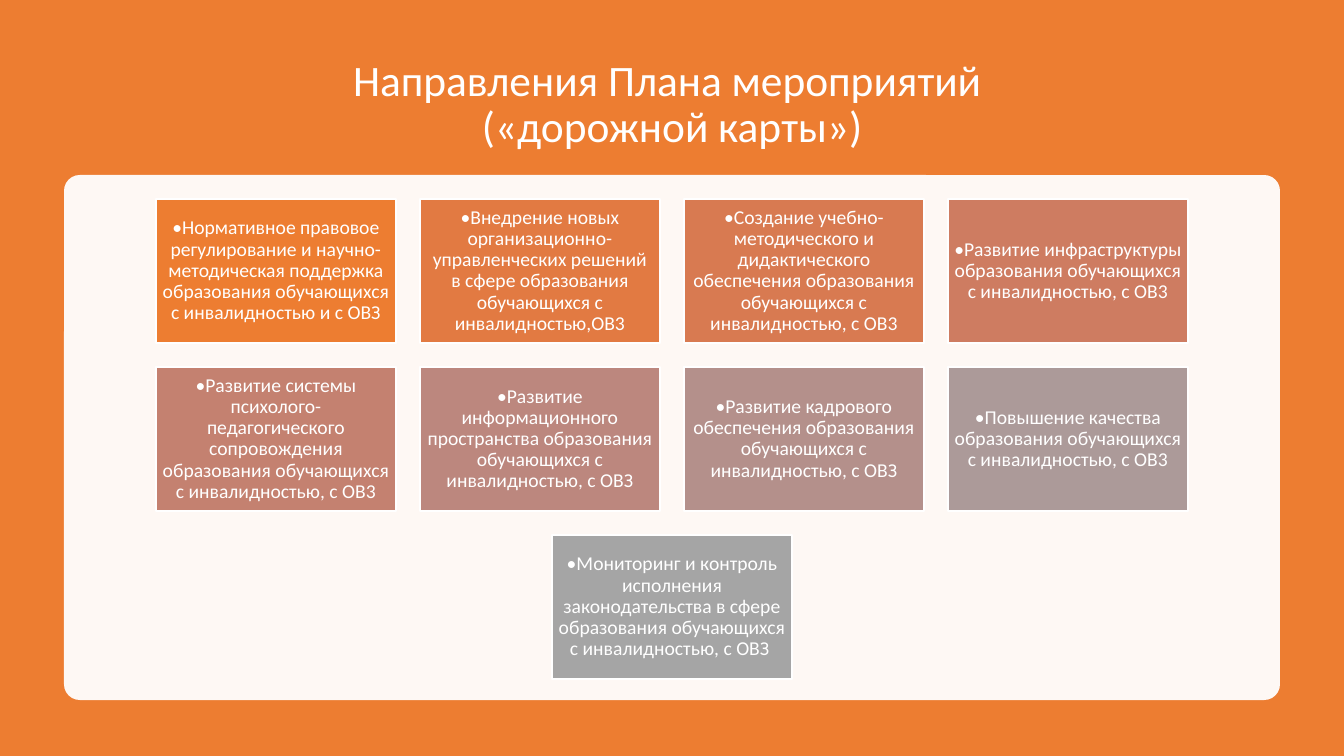
from dataclasses import dataclass

from lxml.etree import SubElement
from pptx import Presentation
from pptx.dml.color import RGBColor
from pptx.enum.shapes import MSO_SHAPE as Preset
from pptx.enum.text import MSO_ANCHOR as Anchor, MSO_AUTO_SIZE as AutoSize, PP_ALIGN as Align
from pptx.oxml.ns import qn
from pptx.shapes.autoshape import Shape
from pptx.slide import Slide
from pptx.util import Emu, Pt

EMU_PER_PX = 914400 / 100.8
PAGE_WIDTH, PAGE_HEIGHT = 1344, 756
BOX_WIDTH, BOX_HEIGHT = 240, 144
BOX_GAP = 24
GRID_TOP = 199
COLUMNS = 4
BOX_INSET = 6

WHITE = RGBColor(0xFF, 0xFF, 0xFF)
ORANGE = RGBColor(0xED, 0x7D, 0x31)
PUMPKIN = RGBColor(0xE2, 0x7A, 0x42)
COPPER = RGBColor(0xD8, 0x7A, 0x51)
TERRACOTTA = RGBColor(0xCE, 0x7C, 0x61)
CLAY = RGBColor(0xC4, 0x81, 0x70)
DUSTY_ROSE = RGBColor(0xBC, 0x87, 0x7E)
MAUVE = RGBColor(0xB4, 0x90, 0x8B)
WARM_GRAY = RGBColor(0xAC, 0x9A, 0x99)
GRAY = RGBColor(0xA5, 0xA5, 0xA5)


@dataclass(frozen=True)
class Direction:
    text: str
    color: RGBColor


TITLE = "Направления Плана мероприятий \v(«дорожной карты»)"
DIRECTIONS = [
    Direction("•Нормативное правовое регулирование и научно-методическая поддержка "
              "образования обучающихся с инвалидностью и с ОВЗ", ORANGE),
    Direction("•Внедрение новых организационно-управленческих решений в сфере "
              "образования обучающихся с инвалидностью,OB3", PUMPKIN),
    Direction("•Создание учебно-методического и дидактического обеспечения "
              "образования обучающихся с инвалидностью, с ОВ3", COPPER),
    Direction("•Развитие инфраструктуры образования обучающихся "
              "с инвалидностью, с ОВ3", TERRACOTTA),
    Direction("•Развитие системы психолого-педагогического сопровождения "
              "образования обучающихся с инвалидностью, с ОВ3", CLAY),
    Direction("•Развитие информационного пространства образования обучающихся "
              "с инвалидностью, с ОВЗ", DUSTY_ROSE),
    Direction("•Развитие кадрового обеспечения образования обучающихся "
              "с инвалидностью, с OBЗ", MAUVE),
    Direction("•Повышение качества образования обучающихся "
              "с инвалидностью, с ОВ3", WARM_GRAY),
    Direction("•Мониторинг и контроль исполнения законодательства в сфере "
              "образования обучающихся с инвалидностью, с ОВЗ ", GRAY),
]


def px(length: int) -> Emu:
    return Emu(round(length * EMU_PER_PX))


def write_text(shape: Shape, text: str, *, size: int, inset: int | None = None) -> None:
    frame = shape.text_frame
    frame.word_wrap = True
    frame.auto_size = AutoSize.NONE
    frame.vertical_anchor = Anchor.MIDDLE
    if inset is not None:
        frame.margin_left = frame.margin_right = px(inset)
        frame.margin_top = frame.margin_bottom = px(inset)
    para = frame.paragraphs[0]
    para.text = text
    para.alignment = Align.CENTER
    para.line_spacing = 0.9
    for span in para.runs:
        span.font.name = "Calibri"
        span.font.size = Pt(size)
        span.font.color.rgb = WHITE


def add_block(page: Slide, preset: Preset, left: int, top: int, width: int, height: int,
              color: RGBColor) -> Shape:
    block = page.shapes.add_shape(preset, px(left), px(top), px(width), px(height))
    block.shadow.inherit = False
    block.fill.solid()
    block.fill.fore_color.rgb = color
    block.line.fill.background()
    return block


def set_opacity(block: Shape, percent: int) -> None:
    color = block.fill._xPr.find(qn("a:solidFill")).find(qn("a:srgbClr"))
    SubElement(color, qn("a:alpha")).set("val", str(percent * 1000))


def add_title(page: Slide) -> None:
    title = page.shapes.title
    title.left, title.top = px(92), px(50)
    title.width, title.height = px(1160), px(111)
    write_text(title, TITLE, size=31)
    page.shapes._spTree.append(title._element)


def add_panel(page: Slide) -> None:
    panel = add_block(page, Preset.ROUNDED_RECTANGLE, 64, 175, 1216, 525, WHITE)
    panel.adjustments[0] = 0.03
    set_opacity(panel, 95)


def add_directions(page: Slide) -> None:
    for start in range(0, len(DIRECTIONS), COLUMNS):
        row = DIRECTIONS[start:start + COLUMNS]
        row_width = len(row) * (BOX_WIDTH + BOX_GAP) - BOX_GAP
        row_left = (PAGE_WIDTH - row_width) // 2
        top = GRID_TOP + start // COLUMNS * (BOX_HEIGHT + BOX_GAP)
        for column, direction in enumerate(row):
            left = row_left + column * (BOX_WIDTH + BOX_GAP)
            box = add_block(page, Preset.RECTANGLE, left, top, BOX_WIDTH, BOX_HEIGHT,
                            direction.color)
            box.line.color.rgb = WHITE
            box.line.width = Pt(1)
            write_text(box, direction.text, size=14, inset=BOX_INSET)


def main() -> None:
    deck = Presentation()
    deck.slide_width, deck.slide_height = px(PAGE_WIDTH), px(PAGE_HEIGHT)
    page = deck.slides.add_slide(deck.slide_layouts[5])
    add_block(page, Preset.RECTANGLE, 0, 0, PAGE_WIDTH, PAGE_HEIGHT, ORANGE)
    add_title(page)
    add_panel(page)
    add_directions(page)
    deck.save("out.pptx")


if __name__ == "__main__":
    main()
